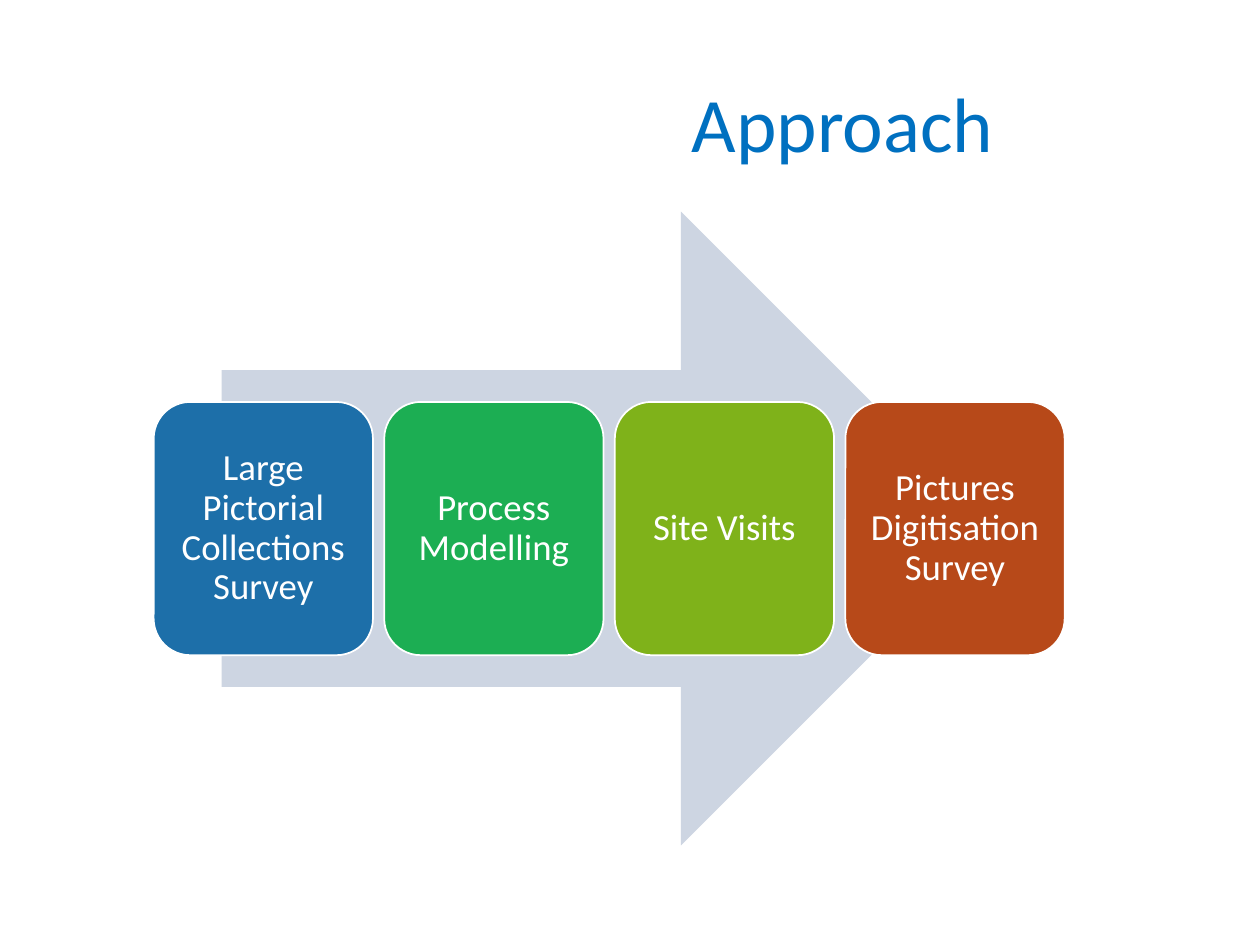
import pptx
import pptx.util
from pptx.dml.color import RGBColor
from pptx.enum.shapes import MSO_SHAPE
from pptx.enum.text import MSO_ANCHOR, PP_ALIGN

Inches, Pt = pptx.util.Inches, pptx.util.Pt

WHITE = RGBColor(0xFF, 0xFF, 0xFF)
TITLE_BLUE = RGBColor(0x00, 0x70, 0xC0)
ARROW_GREY = RGBColor(0xCD, 0xD5, 0xE2)
STEPS = [
    ("Large Pictorial Collections Survey", RGBColor(0x1D, 0x6F, 0xA9)),
    ("Process Modelling", RGBColor(0x1C, 0xAE, 0x53)),
    ("Site Visits", RGBColor(0x7F, 0xB2, 0x1A)),
    ("Pictures Digitisation Survey", RGBColor(0xB7, 0x49, 0x19)),
]

# Grid of step cards, in inches
CARD_LEFT, CARD_TOP = 1.22, 3.19
CARD_WIDTH, CARD_HEIGHT = 1.74, 2.01
CARD_PITCH = 1.83
CARD_INSET = Inches(0.09)

TITLE_FONT = {"name": "Calibri", "size": Pt(44)}
CARD_FONT = {"name": "Calibri", "size": Pt(21)}
CARD_FRAME = {
    "word_wrap": True, "vertical_anchor": MSO_ANCHOR.MIDDLE,
    "margin_left": CARD_INSET, "margin_right": CARD_INSET,
    "margin_top": CARD_INSET, "margin_bottom": CARD_INSET,
}


def apply(target, values):
    for name, value in values.items():
        setattr(target, name, value)


def write(tf, text, font, color, align):
    tf.text = text
    p = tf.paragraphs[0]
    apply(p, {"alignment": align, "line_spacing": 0.9})
    r = p.runs[0]
    apply(r.font, font)
    r.font.color.rgb = color


def add_title(s, text):
    sp = s.shapes.title
    apply(sp, {"left": Inches(5.39), "top": Inches(0.29),
               "width": Inches(2.82), "height": Inches(1.45)})
    sp.text_frame.vertical_anchor = MSO_ANCHOR.MIDDLE
    write(sp.text_frame, text, TITLE_FONT, TITLE_BLUE, PP_ALIGN.LEFT)


def add_filled(s, kind, box, color):
    sp = s.shapes.add_shape(kind, *map(Inches, box))
    sp.shadow.inherit = False
    sp.fill.solid()
    sp.fill.fore_color.rgb = color
    return sp


def add_arrow(s):
    sp = add_filled(s, MSO_SHAPE.RIGHT_ARROW, (1.76, 1.68, 6.16, 5.03), ARROW_GREY)
    sp.line.fill.background()


def add_card(s, column, text, color):
    box = (CARD_LEFT + column * CARD_PITCH, CARD_TOP, CARD_WIDTH, CARD_HEIGHT)
    sp = add_filled(s, MSO_SHAPE.ROUNDED_RECTANGLE, box, color)
    sp.line.color.rgb = WHITE
    sp.line.width = Pt(1)
    apply(sp.text_frame, CARD_FRAME)
    write(sp.text_frame, text, CARD_FONT, WHITE, PP_ALIGN.CENTER)


def main():
    prs = pptx.Presentation()
    apply(prs, {"slide_width": Inches(10), "slide_height": Inches(7.5)})
    s = prs.slides.add_slide(prs.slide_layouts[5])
    add_title(s, "Approach")
    add_arrow(s)
    for column, (text, color) in enumerate(STEPS):
        add_card(s, column, text, color)
    prs.save("out.pptx")


if __name__ == "__main__":
    main()
